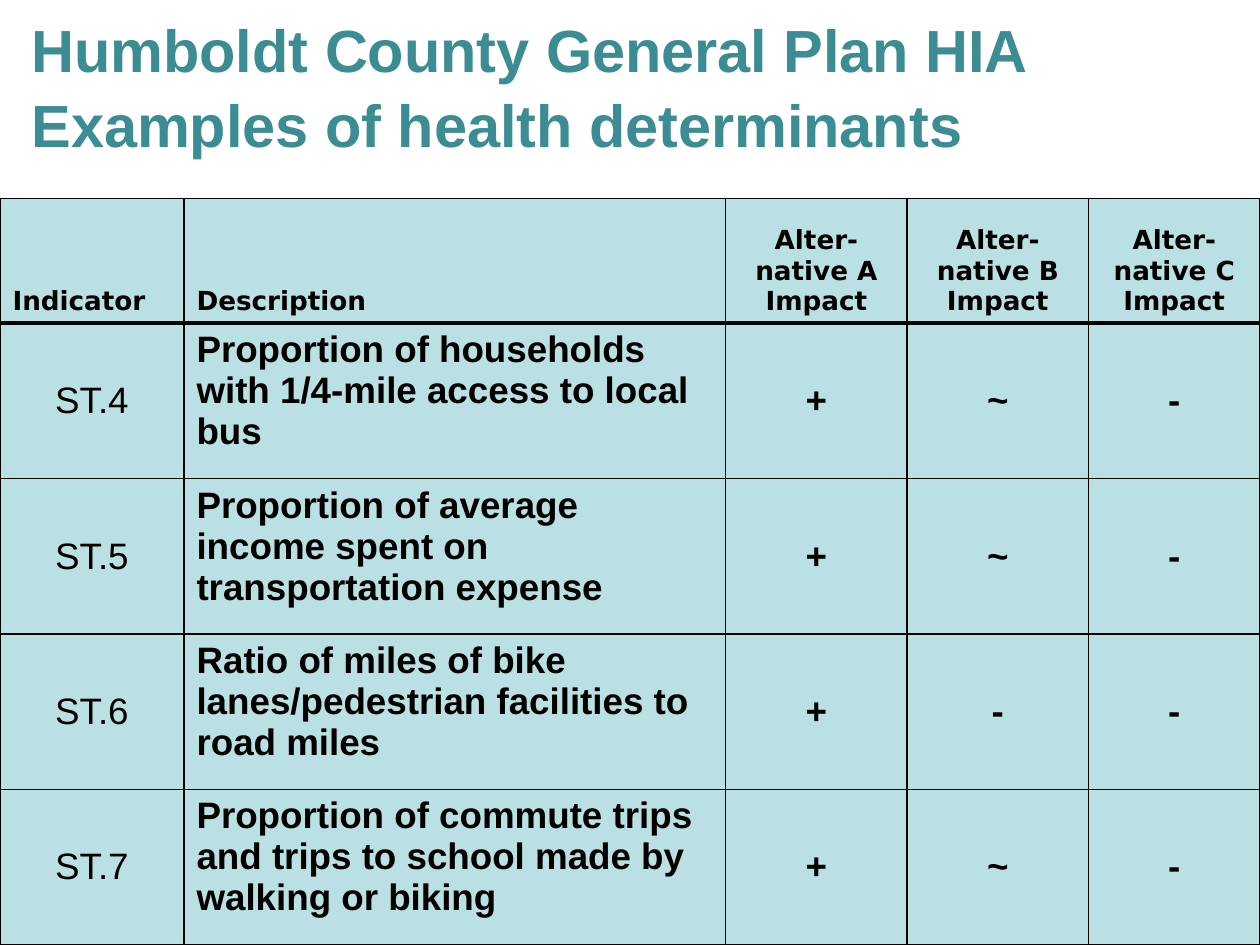
import lxml.etree
import pptx
import pptx.dml.color
import pptx.enum.text
import pptx.oxml.ns
import pptx.util

THEME = {
    "title": "3C8C93", "cell": "BBE0E3", "ink": "000000",
    "font": "Arial", "header_font": "DejaVu Sans",
    "title_size": 34, "header_size": 15, "body_size": 21,
    "line": 1, "header_line": 2.25,
}
COLUMNS = [0.146, 0.43, 0.144, 0.144, 0.136]
TABLE_TOP = 0.21
HEADER_HEIGHT = 0.132
ROWS = [
    ["Indicator", "Description"] + [f"Alter-native {name} Impact" for name in "ABC"],
    ["ST.4", "Proportion of households with 1/4-mile access to local bus", "+", "~", "-"],
    ["ST.5", "Proportion of average income spent on transportation expense", "+", "~", "-"],
    ["ST.6", "Ratio of miles of bike lanes/pedestrian facilities to road miles", "+", "-", "-"],
    ["ST.7", "Proportion of commute trips and trips to school made by walking or biking", "+", "~", "-"],
]
ALIGN = pptx.enum.text.PP_ALIGN
ANCHOR = pptx.enum.text.MSO_ANCHOR


def add_span(para, text, size, font, color, bold):
    span = para.add_run()
    span.text = text
    span.font.size = pptx.util.Pt(size)
    span.font.name = font
    span.font.bold = bold
    span.font.color.rgb = pptx.dml.color.RGBColor.from_string(color)


def add_border(cell, side, width):
    qn = pptx.oxml.ns.qn
    properties = cell._tc.get_or_add_tcPr()
    line = lxml.etree.SubElement(properties, qn(f"a:ln{side}"), w=str(pptx.util.Pt(width)))
    fill = lxml.etree.SubElement(line, qn("a:solidFill"))
    lxml.etree.SubElement(fill, qn("a:srgbClr"), val=THEME["ink"])


deck = pptx.Presentation()
deck.slide_width = pptx.util.Inches(10)
deck.slide_height = pptx.util.Inches(7.5)
width, height = deck.slide_width, deck.slide_height
page = deck.slides.add_slide(deck.slide_layouts[5])

title = page.shapes.title
title.left, title.top = int(width * 0.025), int(height * 0.01)
title.width, title.height = int(width * 0.95), int(height * 0.17)
frame = title.text_frame
frame.margin_left = frame.margin_top = frame.margin_right = frame.margin_bottom = 0
frame.word_wrap = True
frame.auto_size = pptx.enum.text.MSO_AUTO_SIZE.NONE
frame.vertical_anchor = ANCHOR.TOP
para = frame.paragraphs[0]
para.alignment = ALIGN.LEFT
para.line_spacing = 1.05
title_style = (THEME["title_size"], THEME["font"], THEME["title"], True)
add_span(para, "Humboldt County General Plan HIA", *title_style)
para.add_line_break()
add_span(para, "Examples of health determinants", *title_style)

table = page.shapes.add_table(
    len(ROWS), len(COLUMNS), 0, int(height * TABLE_TOP), width, int(height * (1 - TABLE_TOP))
).table
for column, share in zip(table.columns, COLUMNS):
    column.width = int(width * share)
body_height = (1 - TABLE_TOP - HEADER_HEIGHT) / (len(ROWS) - 1)

for r, texts in enumerate(ROWS):
    header = r == 0
    table.rows[r].height = int(height * (HEADER_HEIGHT if header else body_height))
    for c, text in enumerate(texts):
        cell = table.cell(r, c)
        for side in "LRTB":
            heavy = (r, side) in [(0, "B"), (1, "T")]
            add_border(cell, side, THEME["header_line" if heavy else "line"])
        cell.fill.solid()
        cell.fill.fore_color.rgb = pptx.dml.color.RGBColor.from_string(THEME["cell"])
        para = cell.text_frame.paragraphs[0]
        if header:
            cell.vertical_anchor = ANCHOR.BOTTOM
            para.alignment = ALIGN.CENTER if c > 1 else ALIGN.LEFT
            add_span(para, text, THEME["header_size"], THEME["header_font"], THEME["ink"], True)
        else:
            cell.vertical_anchor = ANCHOR.TOP if c == 1 else ANCHOR.MIDDLE
            para.alignment = ALIGN.LEFT if c == 1 else ALIGN.CENTER
            add_span(para, text, THEME["body_size"], THEME["font"], THEME["ink"], c > 0)

deck.save("out.pptx")
